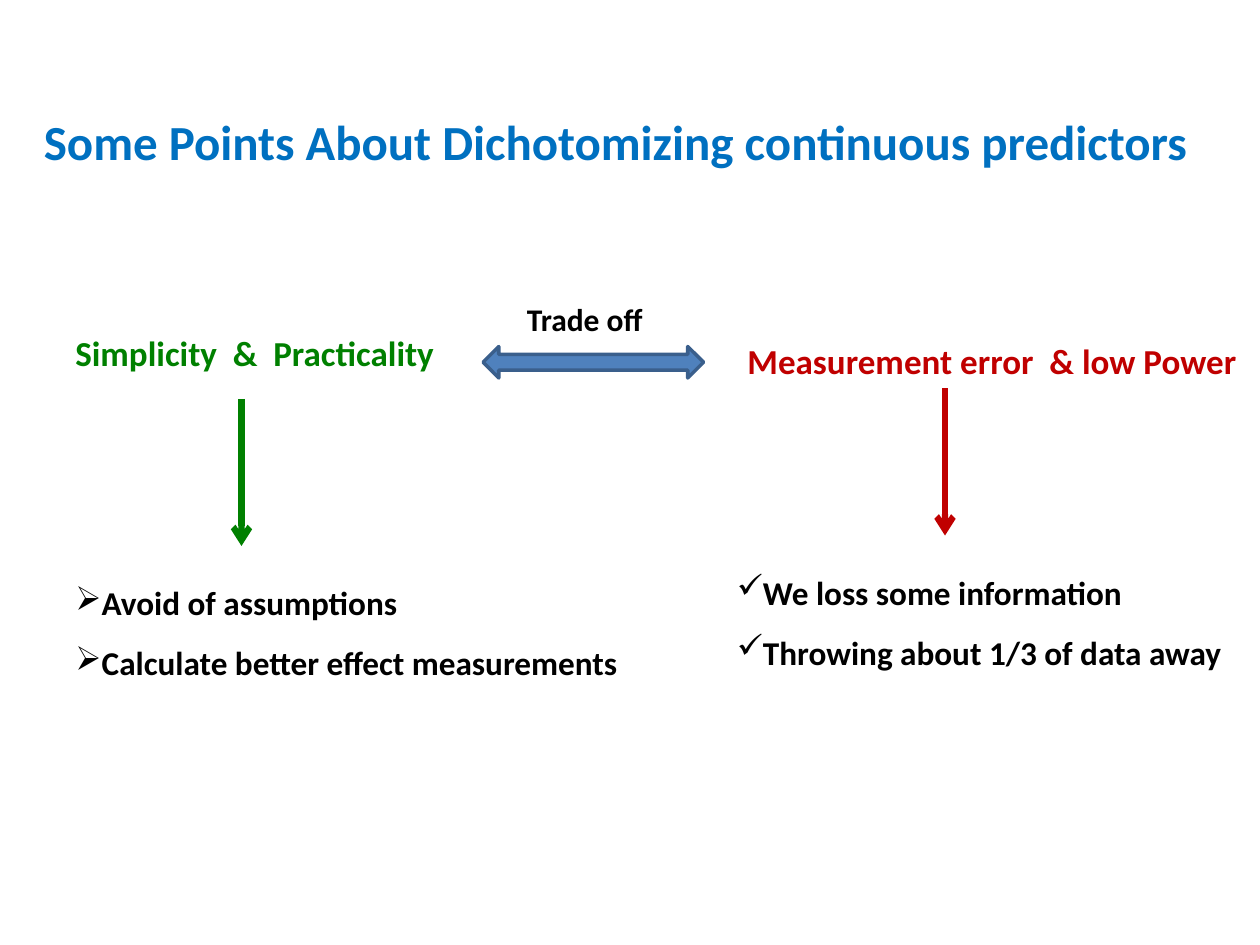
import pptx
import pptx.util
import pptx.dml.color
import pptx.enum.shapes
import pptx.enum.text
import pptx.oxml
import pptx.oxml.ns

RGBColor = pptx.dml.color.RGBColor
BLUE = RGBColor(0x00, 0x70, 0xC0)
GREEN = RGBColor(0x00, 0x80, 0x00)
RED = RGBColor(0xC0, 0x00, 0x00)
BLACK = RGBColor(0x00, 0x00, 0x00)
STEEL = RGBColor(0x4F, 0x81, 0xBD)
STEEL_EDGE = RGBColor(0x3A, 0x5F, 0x8C)

COLUMNS, ROWS = 120, 90


def append_element(parent, tag, **attributes):
    element = pptx.oxml.parse_xml(f"<a:{tag} {pptx.oxml.ns.nsdecls('a')}/>")
    for key, value in attributes.items():
        element.set(key, value)
    parent.append(element)


def write_paragraph(paragraph, text, font="Calibri", size=18, color=BLACK,
                    spacing=None, bullet=None):
    run = paragraph.add_run()
    run.text = text
    run.font.name = font
    run.font.size = pptx.util.Pt(size)
    run.font.bold = True
    run.font.color.rgb = color
    if spacing:
        paragraph.line_spacing = spacing
    if bullet:
        append_element(paragraph._p.get_or_add_pPr(), "buChar", char=bullet)


class TradeOffSlide:
    def __init__(self, deck):
        self.slide = deck.slides.add_slide(deck.slide_layouts[6])
        self.column = deck.slide_width / COLUMNS
        self.row = deck.slide_height / ROWS

    def place(self, left, top, width, height):
        return (round(left * self.column), round(top * self.row),
                round(width * self.column), round(height * self.row))

    def text(self, lines, area, **style):
        frame = self.slide.shapes.add_textbox(*self.place(*area)).text_frame
        frame.word_wrap = True
        frame.auto_size = pptx.enum.text.MSO_AUTO_SIZE.SHAPE_TO_FIT_TEXT
        for index, line in enumerate(lines):
            paragraph = frame.add_paragraph() if index else frame.paragraphs[0]
            write_paragraph(paragraph, line, **style)

    def double_arrow(self, area):
        kind = pptx.enum.shapes.MSO_SHAPE.LEFT_RIGHT_ARROW
        balance = self.slide.shapes.add_shape(kind, *self.place(*area))
        balance.shadow.inherit = False
        balance.fill.solid()
        balance.fill.fore_color.rgb = STEEL
        balance.line.color.rgb = STEEL_EDGE
        balance.line.width = pptx.util.Pt(2)

    def down_arrow(self, column, top, length, color):
        x, y, _, drop = self.place(column, top, 0, length)
        arrow = self.slide.shapes.add_connector(
            pptx.enum.shapes.MSO_CONNECTOR.STRAIGHT, x, y, x, y + drop)
        arrow.line.color.rgb = color
        arrow.line.width = pptx.util.Pt(3.5)
        append_element(arrow.line._get_or_add_ln(), "tailEnd", type="arrow")
        append_element(arrow._element.spPr, "effectLst")


def main():
    deck = pptx.Presentation()
    deck.slide_width = pptx.util.Inches(10)
    deck.slide_height = pptx.util.Inches(7.5)
    page = TradeOffSlide(deck)

    page.text(["Some Points About Dichotomizing continuous predictors"],
              (3, 10, 115, 12.5), size=28, color=BLUE)
    page.text(["Simplicity  &  Practicality"], (6, 31, 37, 5.3), size=20, color=GREEN)
    page.text(["Measurement error  & low Power"], (70, 31.7, 50, 5.3), size=20, color=RED)
    page.double_arrow((46, 33, 21, 3))
    page.text(["Trade off"], (49, 28, 18, 4.8))
    page.text(["Avoid of assumptions", "Calculate better effect measurements"],
              (6, 53, 57, 12.1), size=19, spacing=1.5, bullet="➢")
    page.text(["We loss some information", "Throwing about 1/3 of data away"],
              (69, 52, 51, 12.1), size=19, spacing=1.5, bullet="✓")
    page.down_arrow(23, 38, 14, GREEN)
    page.down_arrow(90, 37, 14, RED)

    deck.save("out.pptx")


if __name__ == "__main__":
    main()
